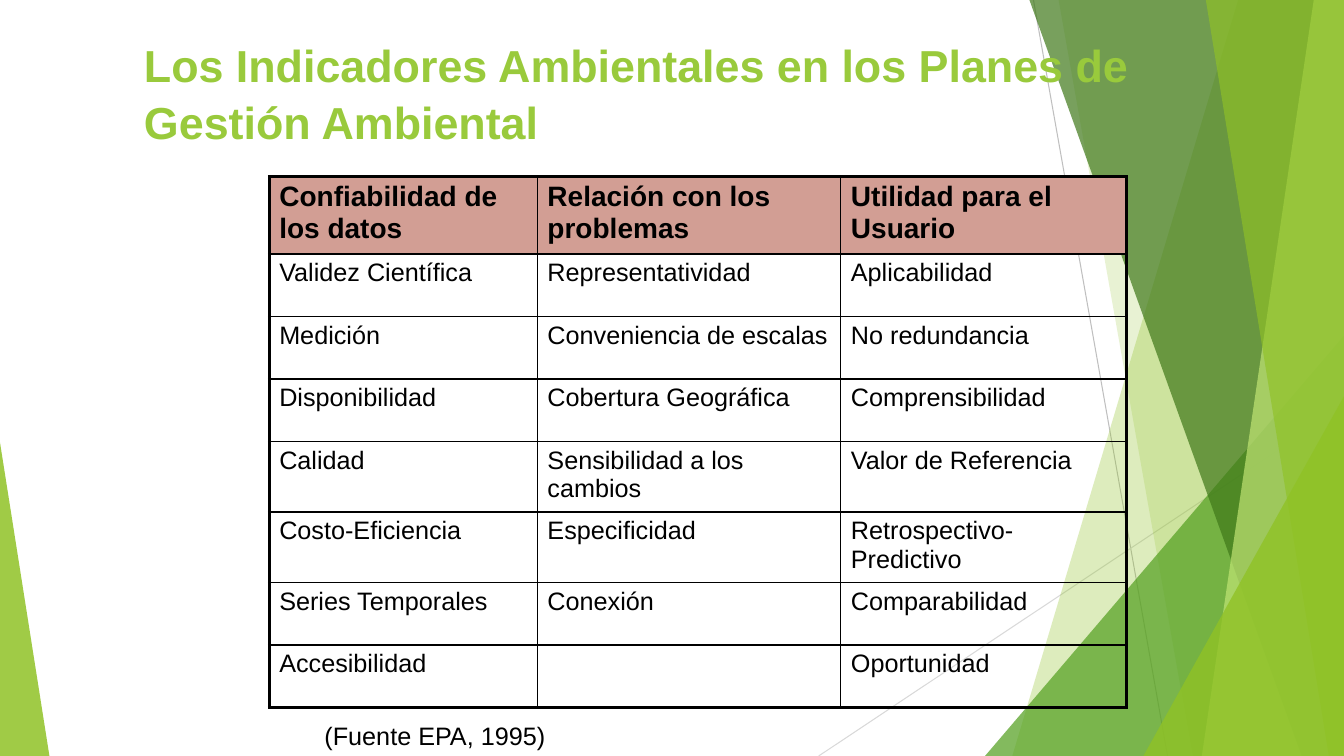
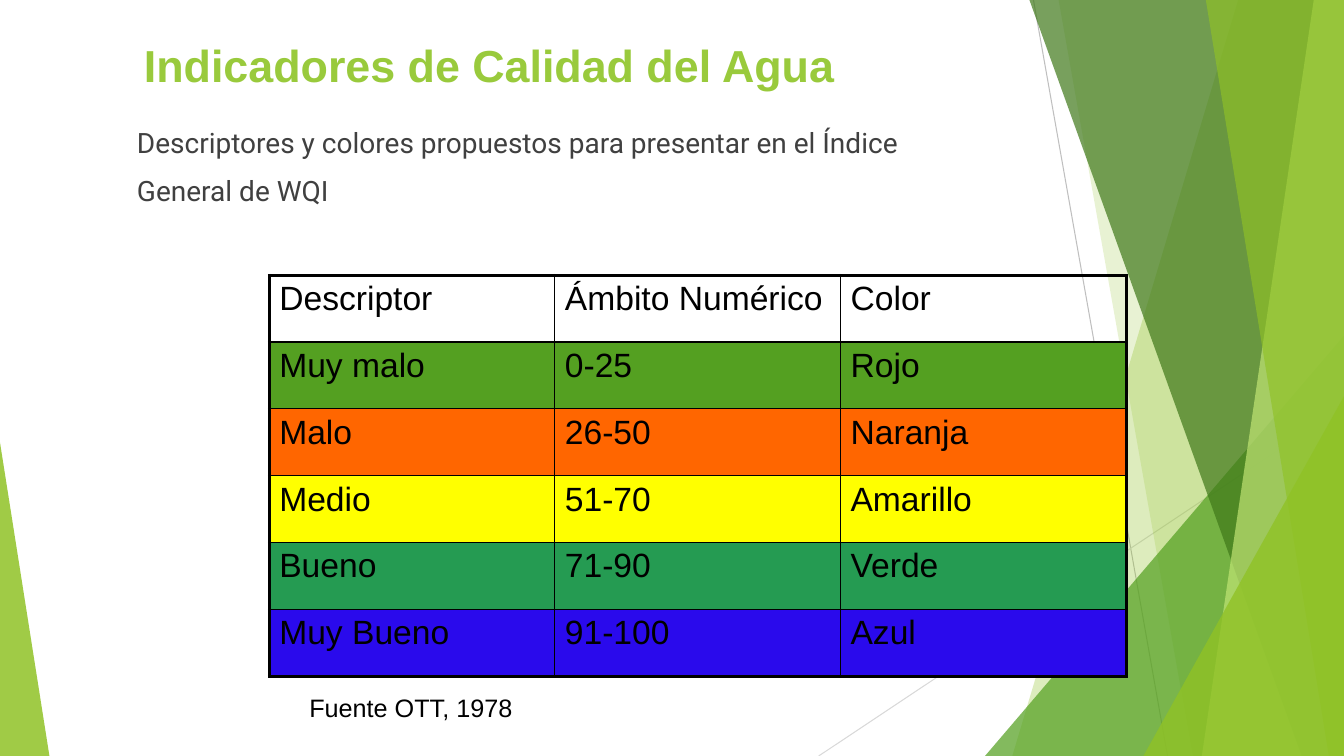
from lxml import etree
from pptx import Presentation
from pptx.dml.color import RGBColor
from pptx.enum.shapes import MSO_CONNECTOR, MSO_SHAPE
from pptx.oxml.ns import qn
from pptx.util import Inches, Pt

STRAIGHT = MSO_CONNECTOR.STRAIGHT
TRIANGLE = MSO_SHAPE.ISOSCELES_TRIANGLE

WIDTH, HEIGHT = 13.33, 7.5
BLANK_LAYOUT = 6
HEADING_FONT, BODY_FONT = "Arial", "Roboto"
THICK, THIN = 2.25, 1

COLORS = {
    "title": "99CA3C", "text": "000000", "body": "404040", "border": "000000",
    "line_dark": "BFBFBF", "line_light": "D9D9D9",
    "lime": "90C226", "leaf": "54A021", "forest": "3F7819", "pale": "C0E474",
    "header": "D29E94", "orange": "FF6600", "yellow": "FFFF00",
    "green": "259B52", "blue": "2A0AEC",
}

# Thin lines: start, end, colour
BACK_LINES = [
    ((10.25, 0), (11.58, HEIGHT), "line_dark"),
    ((WIDTH, 4.03), (8.12, HEIGHT), "line_light"),
]
# Ribbons reach the right edge: top-left x, bottom-left x, colour, opacity
BACK_RIBBONS = [(12.28, 10.04, "lime", 30), (10.5, 11.83, "lime", 20)]
FRONT_RIBBONS = [
    (10.21, 12.91, "forest", 70),
    (13.03, 11.92, "pale", 70),
    (11.96, 13.18, "lime", 65),
]
# Triangles stand on the bottom edge: left, top, width, apex, colour, opacity
BACK_TRIANGLE = (9.77, 3.33, 3.56, 1, "leaf", 72)
FRONT_TRIANGLES = [
    (11.34, 3.93, 1.99, 1, "lime", 80),
    (0, 4.39, 0.49, 0, "lime", 85),
]

CRITERIA = [
    ["Confiabilidad de los datos", "Relación con los problemas", "Utilidad para el Usuario"],
    ["Validez Científica", "Representatividad", "Aplicabilidad"],
    ["Medición", "Conveniencia de escalas", "No redundancia"],
    ["Disponibilidad", "Cobertura Geográfica", "Comprensibilidad"],
    ["Calidad", "Sensibilidad a los cambios", "Valor de Referencia"],
    ["Costo-Eficiencia", "Especificidad", "Retrospectivo-Predictivo"],
    ["Series Temporales", "Conexión", "Comparabilidad"],
    ["Accesibilidad", "", "Oportunidad"],
]
WATER_QUALITY = [
    ["Descriptor", "Ámbito Numérico", "Color"],
    ["Muy malo", "0-25", "Rojo"],
    ["Malo", "26-50", "Naranja"],
    ["Medio", "51-70", "Amarillo"],
    ["Bueno", "71-90", "Verde"],
    ["Muy Bueno", "91-100", "Azul"],
]


def rgb(name):
    return RGBColor.from_string(COLORS[name])


# Background
def paint(shape, color, opacity):
    shape.shadow.inherit = False
    shape.line.fill.background()
    shape.fill.solid()
    shape.fill.fore_color.rgb = rgb(color)
    tint = shape.fill._xPr.find(qn("a:solidFill"))[0]
    etree.SubElement(tint, qn("a:alpha"), val=str(opacity * 1000))


def add_line(page, start, end, color):
    line = page.shapes.add_connector(STRAIGHT, *map(Inches, start + end))
    line.line.color.rgb = rgb(color)
    line.line.width = Pt(0.75)
    etree.SubElement(line._element.spPr, qn("a:effectLst"))


def add_ribbon(page, top_x, bottom_x, color, opacity):
    builder = page.shapes.build_freeform(Inches(top_x), 0)
    corners = [(WIDTH, 0), (WIDTH, HEIGHT), (bottom_x, HEIGHT)]
    builder.add_line_segments([(Inches(x), Inches(y)) for x, y in corners])
    paint(builder.convert_to_shape(), color, opacity)


def add_triangle(page, left, top, width, apex, color, opacity):
    triangle = page.shapes.add_shape(
        TRIANGLE, *map(Inches, (left, top, width, HEIGHT - top)))
    triangle.adjustments[0] = apex
    paint(triangle, color, opacity)


def add_background(page):
    for line in BACK_LINES:
        add_line(page, *line)
    for ribbon in BACK_RIBBONS:
        add_ribbon(page, *ribbon)
    add_triangle(page, *BACK_TRIANGLE)
    for ribbon in FRONT_RIBBONS:
        add_ribbon(page, *ribbon)
    for triangle in FRONT_TRIANGLES:
        add_triangle(page, *triangle)


# Text
def add_span(para, text, size, color="text", font=HEADING_FONT, bold=False):
    span = para.add_run()
    span.text = text
    span.font.size = Pt(size)
    span.font.name = font
    span.font.bold = bold
    span.font.color.rgb = rgb(color)


def add_text(page, place, lines, size, space_before=0, line_spacing=1.0, **style):
    box = page.shapes.add_textbox(*map(Inches, place))
    frame = box.text_frame
    frame.word_wrap = True
    for index, text in enumerate(lines):
        para = frame.add_paragraph() if index else frame.paragraphs[0]
        para.space_before = Pt(space_before)
        para.line_spacing = line_spacing
        add_span(para, text, size, **style)


def add_page(deck, title):
    page = deck.slides.add_slide(deck.slide_layouts[BLANK_LAYOUT])
    add_background(page)
    add_text(page, (1.33, 0.3, 11.33, 1.25), [title], 32,
             line_spacing=1.05, color="title", bold=True)
    return page


# Tables
def set_borders(cell, widths):
    properties = cell._tc.get_or_add_tcPr()
    for index, (side, width) in enumerate(widths.items()):
        border = etree.Element(qn(f"a:ln{side}"), w=str(Pt(width)))
        fill = etree.SubElement(border, qn("a:solidFill"))
        etree.SubElement(fill, qn("a:srgbClr"), val=COLORS["border"])
        properties.insert(index, border)


def add_grid(page, top, rows, columns, heights, fills, sizes, bold_header=False):
    """Draw a table with a thick frame; fills and sizes go row by row."""
    frame = page.shapes.add_table(
        len(rows), len(columns), Inches(2.67), Inches(top),
        Inches(sum(columns)), Inches(sum(heights)))
    table = frame.table
    table.first_row = table.horz_banding = False
    for column, width in zip(table.columns, columns):
        column.width = Inches(width)
    last_row, last_column = len(rows) - 1, len(columns) - 1
    for r, texts in enumerate(rows):
        table.rows[r].height = Inches(heights[r])
        for c, text in enumerate(texts):
            cell = table.cell(r, c)
            if fills[r]:
                cell.fill.solid()
                cell.fill.fore_color.rgb = rgb(fills[r])
            else:
                cell.fill.background()
            set_borders(cell, {
                "L": THICK if c == 0 else THIN,
                "R": THICK if c == last_column else THIN,
                "T": THICK if r == 0 else THIN,
                "B": THICK if r == last_row else THIN,
            })
            if text:
                add_span(cell.text_frame.paragraphs[0], text, sizes[r],
                         bold=bold_header and r == 0)


# Slides
def add_criteria_page(deck):
    page = add_page(deck, "Los Indicadores Ambientales en los Planes de Gestión Ambiental")
    body_rows = len(CRITERIA) - 1
    add_grid(page, 1.75, CRITERIA, [2.66, 3.01, 2.83],
             [0.77] + [0.62] * 3 + [0.7] * 2 + [0.62] * 2,
             ["header"] + [None] * body_rows, [20] + [18] * body_rows,
             bold_header=True)
    add_text(page, (3.12, 7.1, 6.54, 0.4), ["(Fuente EPA, 1995)"], 18)


def add_water_page(deck):
    page = add_page(deck, "Indicadores de Calidad del Agua")
    count = len(WATER_QUALITY)
    add_grid(page, 2.73, WATER_QUALITY, [8.5 / 3] * 3, [3.98 / count] * count,
             [None, "leaf", "orange", "yellow", "green", "blue"], [24] * count)
    add_text(page, (1.26, 1.2, 9.25, 1.2),
             ["Descriptores y colores propuestos para presentar en el Índice",
              "General de WQI"],
             20, space_before=10, color="body", font=BODY_FONT)
    add_text(page, (2.97, 6.82, 2.84, 0.4), ["Fuente OTT, 1978"], 18)


def main():
    deck = Presentation()
    deck.slide_width, deck.slide_height = Inches(WIDTH), Inches(HEIGHT)
    add_criteria_page(deck)
    add_water_page(deck)
    deck.save("out.pptx")


if __name__ == "__main__":
    main()
